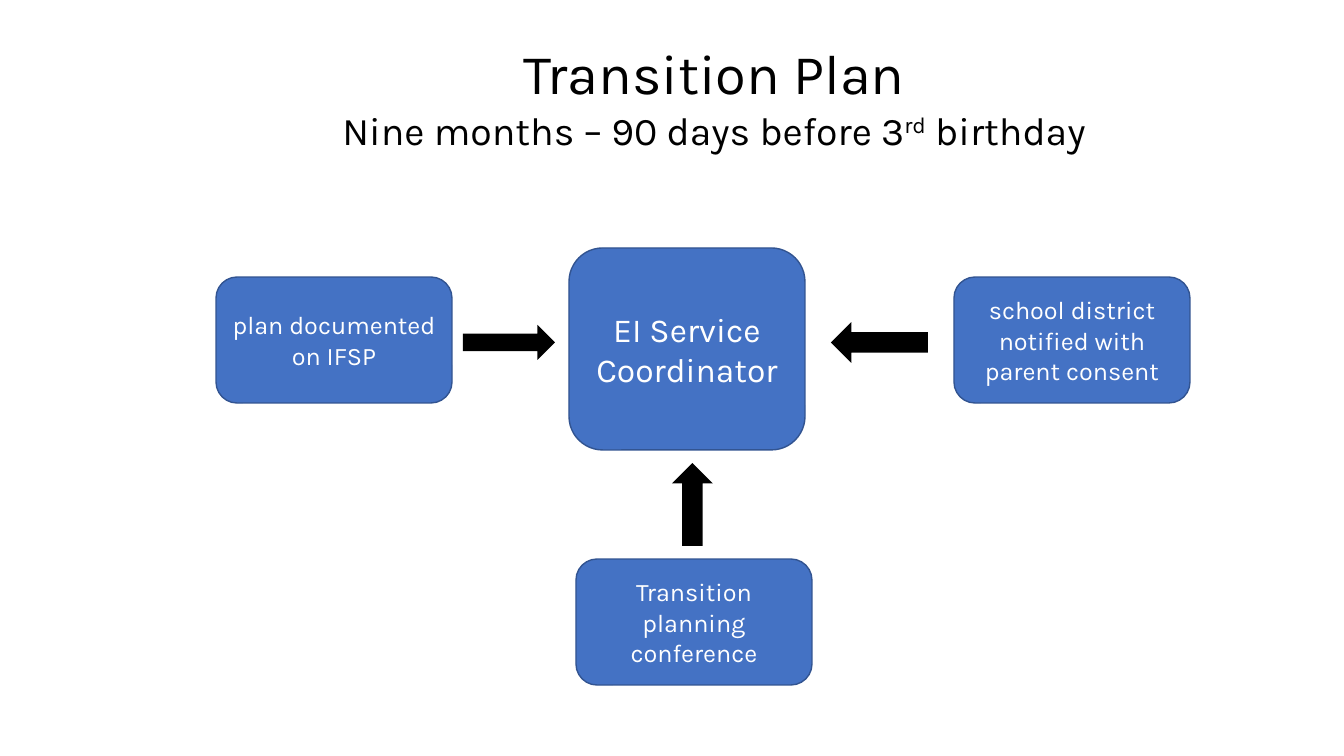
from pptx import Presentation
from pptx.dml.color import RGBColor
from pptx.enum.shapes import MSO_SHAPE
from pptx.enum.text import MSO_ANCHOR, PP_ALIGN
from pptx.util import Inches, Pt

THEME = {
    "font": "Karla",
    "ink": RGBColor.from_string("000000"),
    "box": RGBColor.from_string("4472C4"),
    "outline": RGBColor.from_string("325491"),
    "box_text": RGBColor.from_string("FFFFFF"),
    "title": Pt(40),
    "subtitle": Pt(28),
    "hub": Pt(24),
    "step": Pt(18),
}


def px(*lengths):
    return [round(length * Inches(1) / 100.8) for length in lengths]


def add_run(paragraph, text, size, color):
    run = paragraph.add_run()
    run.text = text
    run.font.color.rgb = color
    for name, value in {"name": THEME["font"], "size": size}.items():
        setattr(run.font, name, value)
    return run


prs = Presentation()
prs.slide_width, prs.slide_height = px(1344, 756)
slide = prs.slides.add_slide(prs.slide_layouts[6])

# Heading
heading = slide.shapes.add_textbox(*px(250, 34, 928, 126)).text_frame
heading.word_wrap = True
title = heading.paragraphs[0]
subtitle = heading.add_paragraph()
title.alignment = subtitle.alignment = PP_ALIGN.CENTER
add_run(title, "Transition Plan", THEME["title"], THEME["ink"])
for text, baseline in (
    ("Nine months – 90 days before 3", None),
    ("rd", "30000"),
    (" birthday", None),
):
    part = add_run(subtitle, text, THEME["subtitle"], THEME["ink"])
    if baseline:
        part.font._element.set("baseline", baseline)

# Coordinator and the three steps around it
STEP_WIDTH, STEP_HEIGHT = 236, 126
for text, left, top, height, size in (
    ("EI Service Coordinator", 569, 248, 202, THEME["hub"]),
    ("plan documented on IFSP", 216, 277, STEP_HEIGHT, THEME["step"]),
    ("school district notified with parent consent", 954, 277, STEP_HEIGHT, THEME["step"]),
    ("Transition planning conference", 576, 559, STEP_HEIGHT, THEME["step"]),
):
    step = slide.shapes.add_shape(
        MSO_SHAPE.ROUNDED_RECTANGLE, *px(left, top, STEP_WIDTH, height)
    )
    step.shadow.inherit = False
    step.fill.solid()
    step.fill.fore_color.rgb = THEME["box"]
    step.line.color.rgb = THEME["outline"]
    step.line.width = Pt(1)
    label = step.text_frame
    label.word_wrap = True
    label.vertical_anchor = MSO_ANCHOR.MIDDLE
    label.paragraphs[0].alignment = PP_ALIGN.CENTER
    add_run(label.paragraphs[0], text, size, THEME["box_text"])

# Block arrows pointing at the coordinator
for direction, *place in (
    (MSO_SHAPE.RIGHT_ARROW, 463, 325, 92, 35),
    (MSO_SHAPE.LEFT_ARROW, 831, 322, 97, 41),
    (MSO_SHAPE.UP_ARROW, 672, 463, 41, 83),
):
    arrow = slide.shapes.add_shape(direction, *px(*place))
    arrow.shadow.inherit = False
    arrow.fill.solid()
    arrow.fill.fore_color.rgb = THEME["ink"]
    arrow.line.fill.background()

prs.save("out.pptx")
